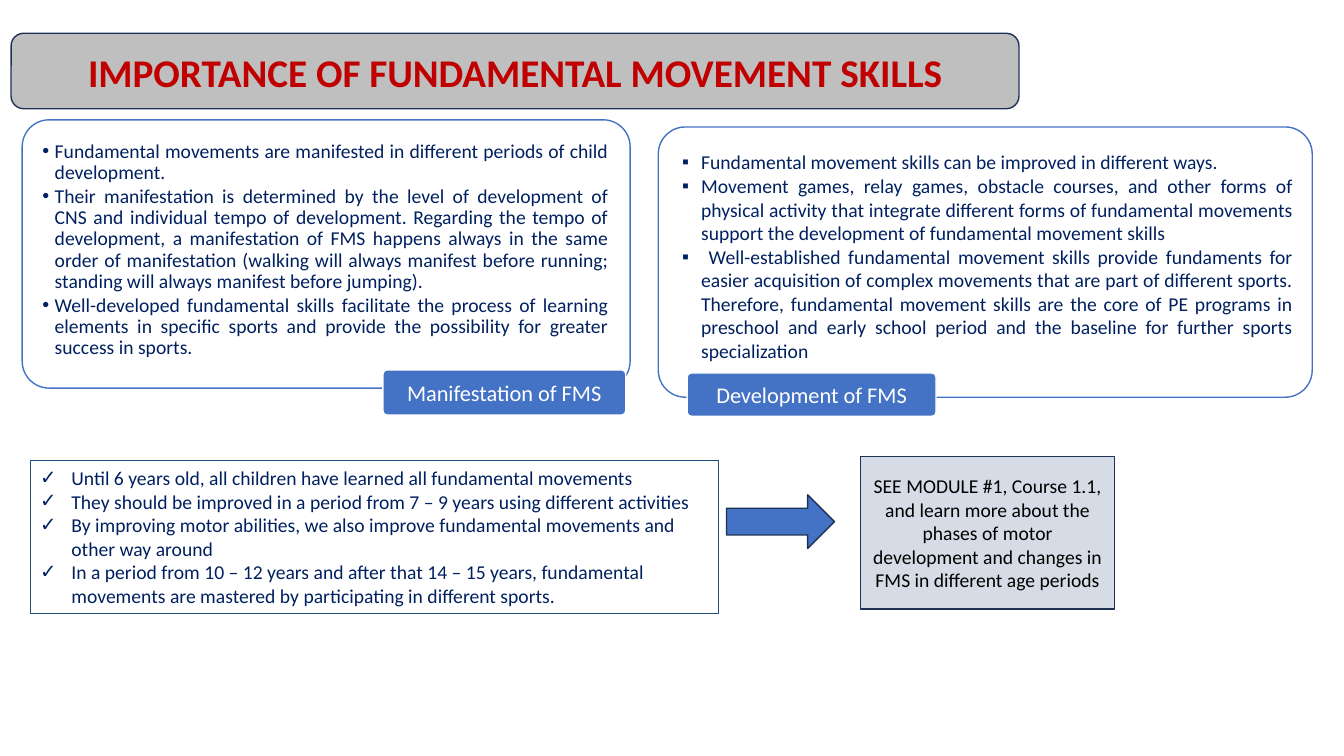
from dataclasses import dataclass

import pptx
import pptx.util
from lxml import etree
from pptx.dml.color import RGBColor
from pptx.enum.shapes import MSO_SHAPE
from pptx.enum.text import MSO_ANCHOR, MSO_AUTO_SIZE, PP_ALIGN
from pptx.oxml.ns import qn
from pptx.util import Cm, Pt

FONT = "Calibri"
WHITE = RGBColor(0xFF, 0xFF, 0xFF)
BLACK = RGBColor(0, 0, 0)
GREY = RGBColor(0xBF, 0xBF, 0xBF)
PALE = RGBColor(0xD6, 0xDC, 0xE5)
BLUE = RGBColor(0x44, 0x72, 0xC4)
NAVY = RGBColor(0x00, 0x20, 0x60)
DARK = RGBColor(0x1E, 0x32, 0x56)
STEEL = RGBColor(0x1F, 0x4E, 0x79)
RED = RGBColor(0xC0, 0x00, 0x00)


@dataclass(frozen=True)
class Box:
    left: float
    top: float
    width: float
    height: float

    def lengths(self) -> tuple:
        return Cm(self.left), Cm(self.top), Cm(self.width), Cm(self.height)


@dataclass(frozen=True)
class Bullets:
    mark: str
    indent: float
    items: tuple[str, ...]
    align: PP_ALIGN = PP_ALIGN.JUSTIFY
    line_spacing: float = 1.0
    space_after: float = 0
    inset: tuple[float, float] = (0.25, 0.13)


@dataclass(frozen=True)
class Panel:
    frame: Box
    text_area: Box
    bullets: Bullets
    label: str
    label_area: Box


PANELS = (
    Panel(
        Box(0.56, 3.02, 15.32, 6.76),
        Box(0.71, 3.2, 14.99, 5),
        Bullets("•", 0.31, (
            "Fundamental movements are manifested in different periods of child development.",
            "Their manifestation is determined by the level of development of CNS and individual "
            "tempo of development. Regarding the tempo of development, a manifestation of FMS "
            "happens always in the same order of manifestation (walking will always manifest "
            "before running; standing will always manifest before jumping).",
            "Well-developed fundamental skills facilitate the process of learning elements in "
            "specific sports and provide the possibility for greater success in sports.",
        ), line_spacing=0.9, space_after=2.1, inset=(0.36, 0.36)),
        "Manifestation of FMS",
        Box(9.65, 9.32, 6.12, 1.14),
    ),
    Panel(
        Box(16.59, 3.2, 16.48, 6.81),
        Box(16.94, 3.66, 15.9, 5.64),
        Bullets("▪", 0.48, (
            "Fundamental movement skills can be improved in different ways.",
            "Movement games, relay games, obstacle courses, and other forms of physical activity "
            "that integrate different forms of fundamental movements support the development of "
            "fundamental movement skills",
            " Well-established fundamental movement skills provide fundaments for easier "
            "acquisition of complex movements that are part of different sports. Therefore, "
            "fundamental movement skills are the core of PE programs in preschool and early "
            "school period and the baseline for further sports specialization",
        )),
        "Development of FMS",
        Box(17.32, 9.4, 6.27, 1.09),
    ),
)

AGE_PERIODS = Bullets("✓", 0.79, (
    "Until 6 years old, all children have learned all fundamental movements",
    "They should be improved in a period from 7 – 9 years using different activities",
    "By improving motor abilities, we also improve fundamental movements and other way around",
    "In a period from 10 – 12 years and after that 14 – 15 years, fundamental movements are "
    "mastered by participating in different sports.",
), align=PP_ALIGN.LEFT)


def add_block(slide, kind: MSO_SHAPE, box: Box, fill: RGBColor | None, line: RGBColor,
              line_width: float = 1):
    block = slide.shapes.add_shape(kind, *box.lengths())
    block.shadow.inherit = False
    if fill is None:
        block.fill.background()
    else:
        block.fill.solid()
        block.fill.fore_color.rgb = fill
    block.line.color.rgb = line
    block.line.width = Pt(line_width)
    return block


def set_insets(frame, side: float, end: float) -> None:
    frame.margin_left = frame.margin_right = Cm(side)
    frame.margin_top = frame.margin_bottom = Cm(end)


def style_text(paragraph, size: float, color: RGBColor, bold: bool = False) -> None:
    for run in paragraph.runs:
        run.font.name = FONT
        run.font.size = Pt(size)
        run.font.bold = bold
        run.font.color.rgb = color


def write_centred(frame, text: str, size: float, color: RGBColor, bold: bool = False) -> None:
    frame.word_wrap = True
    frame.vertical_anchor = MSO_ANCHOR.MIDDLE
    frame.text = text
    frame.paragraphs[0].alignment = PP_ALIGN.CENTER
    style_text(frame.paragraphs[0], size, color, bold)


def write_bullets(frame, bullets: Bullets) -> None:
    frame.word_wrap = True
    frame.vertical_anchor = MSO_ANCHOR.TOP
    set_insets(frame, *bullets.inset)
    frame.text = "\n".join(bullets.items)
    for paragraph in frame.paragraphs:
        paragraph.alignment = bullets.align
        paragraph.line_spacing = bullets.line_spacing
        paragraph.space_after = Pt(bullets.space_after)
        properties = paragraph._p.get_or_add_pPr()
        properties.set("marL", str(Cm(bullets.indent)))
        properties.set("indent", str(-Cm(bullets.indent)))
        etree.SubElement(properties, qn("a:buFont"), typeface="Arial")
        etree.SubElement(properties, qn("a:buChar"), char=bullets.mark)
        style_text(paragraph, 14, NAVY)


def add_panel(slide, panel: Panel) -> None:
    outline = add_block(slide, MSO_SHAPE.ROUNDED_RECTANGLE, panel.frame, WHITE, BLUE)
    outline.adjustments[0] = 0.1
    points = slide.shapes.add_textbox(*panel.text_area.lengths())
    write_bullets(points.text_frame, panel.bullets)
    label = add_block(slide, MSO_SHAPE.ROUNDED_RECTANGLE, panel.label_area, BLUE, WHITE)
    label.adjustments[0] = 0.1
    set_insets(label.text_frame, 0.08, 0.05)
    write_centred(label.text_frame, panel.label, 16, WHITE)


def main() -> None:
    deck = pptx.Presentation()
    deck.slide_width, deck.slide_height = Cm(33.87), Cm(19.05)
    slide = deck.slides.add_slide(deck.slide_layouts[5])

    # Title over its banner
    add_block(slide, MSO_SHAPE.ROUNDED_RECTANGLE, Box(0.28, 0.84, 25.4, 1.9), GREY, DARK)
    title = slide.shapes.title
    title.left, title.top, title.width, title.height = Box(0.56, 1.09, 24.84, 1.45).lengths()
    title.text_frame.auto_size = MSO_AUTO_SIZE.NONE
    write_centred(title.text_frame, "IMPORTANCE OF FUNDAMENTAL MOVEMENT SKILLS", 28, RED, True)
    slide.shapes._spTree.append(title._element)

    # Manifestation and development panels
    for panel in PANELS:
        add_panel(slide, panel)

    # Age periods, leading to the module reference
    periods = add_block(slide, MSO_SHAPE.RECTANGLE, Box(0.76, 11.61, 17.35, 3.84),
                        None, STEEL, 0.75)
    write_bullets(periods.text_frame, AGE_PERIODS)
    module = add_block(slide, MSO_SHAPE.RECTANGLE, Box(21.69, 11.51, 6.4, 3.84), PALE, DARK)
    write_centred(module.text_frame,
                  "SEE MODULE #1, Course 1.1, and learn more about the phases of motor "
                  "development and changes in FMS in different age periods", 14, BLACK)
    add_block(slide, MSO_SHAPE.RIGHT_ARROW, Box(18.31, 12.47, 2.72, 1.35), BLUE, DARK)

    deck.save("out.pptx")


if __name__ == "__main__":
    main()
